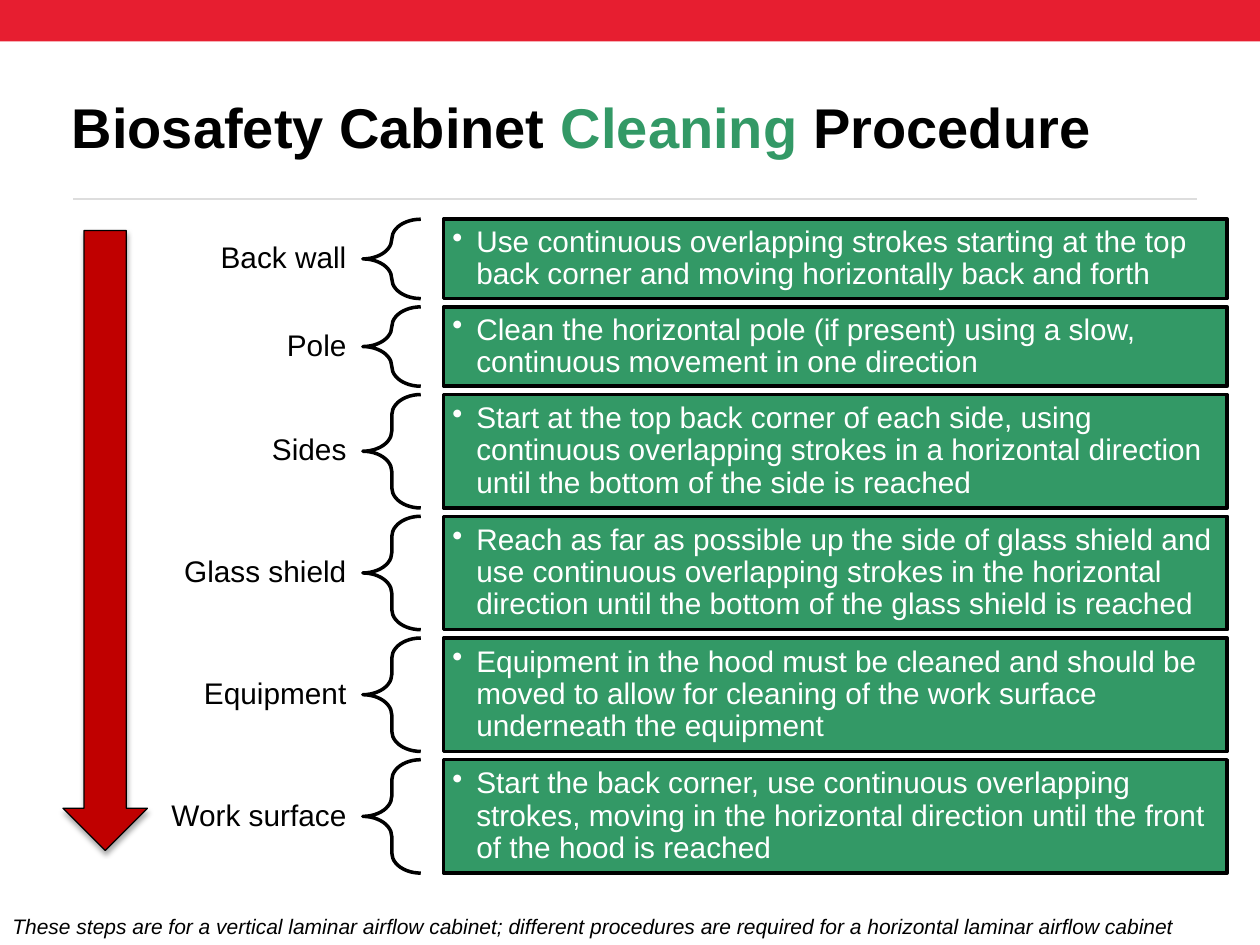
from dataclasses import dataclass

from lxml.etree import SubElement as Sub
from pptx import Presentation
from pptx.dml.color import RGBColor as RGB
from pptx.enum.shapes import MSO_CONNECTOR as Conn, MSO_SHAPE as Kind
from pptx.enum.text import MSO_ANCHOR as Anchor, MSO_AUTO_SIZE as Auto, PP_ALIGN as Align
from pptx.oxml.ns import qn
from pptx.util import Inches, Pt

BLACK = RGB(0x00, 0x00, 0x00)
WHITE = RGB(0xFF, 0xFF, 0xFF)
GREEN = RGB(0x33, 0x99, 0x66)
RED = RGB(0xE7, 0x1E, 0x30)
DARK = RGB(0xC0, 0x00, 0x00)
GREY = RGB(0xDD, 0xDD, 0xDD)

WIDE, HIGH = Inches(10), Inches(7.5)
COLS, ROWS = 100, 75
TOP, END = 17.4, 69.3
LABEL = 3.7


@dataclass(frozen=True)
class Box:
    col: float
    row: float
    cols: float
    rows: float

    def emu(self) -> tuple[int, int, int, int]:
        return (round(self.col * WIDE / COLS), round(self.row * HIGH / ROWS),
                round(self.cols * WIDE / COLS), round(self.rows * HIGH / ROWS))


@dataclass(frozen=True)
class Step:
    name: str
    text: str
    rows: float


STEPS = [
    Step("Back wall", "Use continuous overlapping strokes starting at the top back corner "
         "and moving horizontally back and forth", 6.3),
    Step("Pole", "Clean the horizontal pole (if present) using a slow, "
         "continuous movement in one direction", 6.3),
    Step("Sides", "Start at the top back corner of each side, using continuous overlapping "
         "strokes in a horizontal direction until the bottom of the side is reached", 9),
    Step("Glass shield", "Reach as far as possible up the side of glass shield and use "
         "continuous overlapping strokes in the horizontal direction until the bottom "
         "of the glass shield is reached", 9),
    Step("Equipment", "Equipment in the hood must be cleaned and should be moved to allow "
         "for cleaning of the work surface underneath the equipment", 9),
    Step("Work surface", "Start the back corner, use continuous overlapping strokes, moving "
         "in the horizontal direction until the front of the hood is reached", 9),
]


def write(shape, *parts: tuple[str, RGB], size: float = 17, bold: bool = False,
          slant: bool = False, align=Align.LEFT, anchor=Anchor.MIDDLE,
          space: float = 0.9, pad: tuple[float, float] = (0.1, 0.05),
          hang: float = 0) -> None:
    frame = shape.text_frame
    frame.word_wrap = True
    frame.auto_size = Auto.NONE
    frame.vertical_anchor = anchor
    frame.margin_left = frame.margin_right = Inches(pad[0])
    frame.margin_top = frame.margin_bottom = Inches(pad[1])
    para = frame.paragraphs[0]
    para.alignment = align
    para.line_spacing = space
    if hang:
        para.level = 1
        props = para._p.get_or_add_pPr()
        props.set("marL", str(Inches(hang)))
        props.set("indent", str(-Inches(hang)))
        Sub(props, qn("a:buChar"), char="•")
    for text, hue in parts:
        run = para.add_run()
        run.text = text
        font = run.font
        font.name, font.size = "Arial", Pt(size)
        font.bold, font.italic = bold, slant
        font.color.rgb = hue


def draw(slide, kind: Kind, box: Box, fill: RGB | None = None,
         line: RGB | None = None, width: float = 2):
    shape = slide.shapes.add_shape(kind, *box.emu())
    shape.shadow.inherit = False
    if fill is None:
        shape.fill.background()
    else:
        shape.fill.solid()
        shape.fill.fore_color.rgb = fill
    if line is None:
        shape.line.fill.background()
    else:
        shape.line.color.rgb = line
        shape.line.width = Pt(width)
    return shape


def rule(slide, left: float, right: float, row: float) -> None:
    x, y, w, _ = Box(left, row, right - left, 0).emu()
    line = slide.shapes.add_connector(Conn.STRAIGHT, x, y, x + w, y)
    line.line.color.rgb = GREY
    line.line.width = Pt(0.75)
    Sub(line._element.spPr, qn("a:effectLst"))


def shade(shape) -> None:
    list_ = shape._element.spPr.find(qn("a:effectLst"))
    cast = Sub(list_, qn("a:outerShdw"), blurRad=str(Pt(3.1)), dist=str(Pt(1.8)),
               dir="5400000", rotWithShape="0")
    hue = Sub(cast, qn("a:srgbClr"), val=str(BLACK))
    Sub(hue, qn("a:alpha"), val="35000")


def label(slide, box: Box):
    return slide.shapes.add_textbox(*box.emu())


def chart_steps(slide, steps: list[Step]) -> None:
    gap = (END - TOP - sum(step.rows for step in steps)) / (len(steps) - 1)
    row = TOP
    for step in steps:
        name = label(slide, Box(5.9, row + (step.rows - LABEL) / 2, 22.9, LABEL))
        write(name, (step.name, BLACK), align=Align.RIGHT, pad=(0.13, 0.05))
        brace = draw(slide, Kind.LEFT_BRACE, Box(28.8, row, 4.6, step.rows), line=BLACK)
        brace.adjustments[0], brace.adjustments[1] = 0.35, 0.5
        panel = draw(slide, Kind.RECTANGLE, Box(35.2, row, 62.2, step.rows), GREEN, BLACK)
        write(panel, (step.text, WHITE), pad=(0.07, 0.07), hang=0.19)
        row += step.rows + gap


def main() -> None:
    deck = Presentation()
    deck.slide_width, deck.slide_height = WIDE, HIGH
    slide = deck.slides.add_slide(deck.slide_layouts[5])

    draw(slide, Kind.RECTANGLE, Box(0, 0, COLS, 3.3), RED)
    rule(slide, 5.8, 95, 15.8)

    title = slide.shapes.title
    title.left, title.top, title.width, title.height = Box(4.7, 6.7, 90.3, 7.5).emu()
    write(title, ("Biosafety Cabinet ", BLACK), ("Cleaning", GREEN), (" Procedure", BLACK),
          size=32, bold=True, space=0.85)

    chart_steps(slide, STEPS)

    arrow = draw(slide, Kind.DOWN_ARROW, Box(5, 18.3, 6.7, 49.2), DARK, BLACK, 0.75)
    shade(arrow)

    note = label(slide, Box(0, 72, 97.5, 3))
    write(note, ("These steps are for a vertical laminar airflow cabinet; different procedures "
                 "are required for a horizontal laminar airflow cabinet", BLACK),
          size=12, slant=True, anchor=Anchor.TOP, space=1.0)

    deck.save("out.pptx")


if __name__ == "__main__":
    main()
